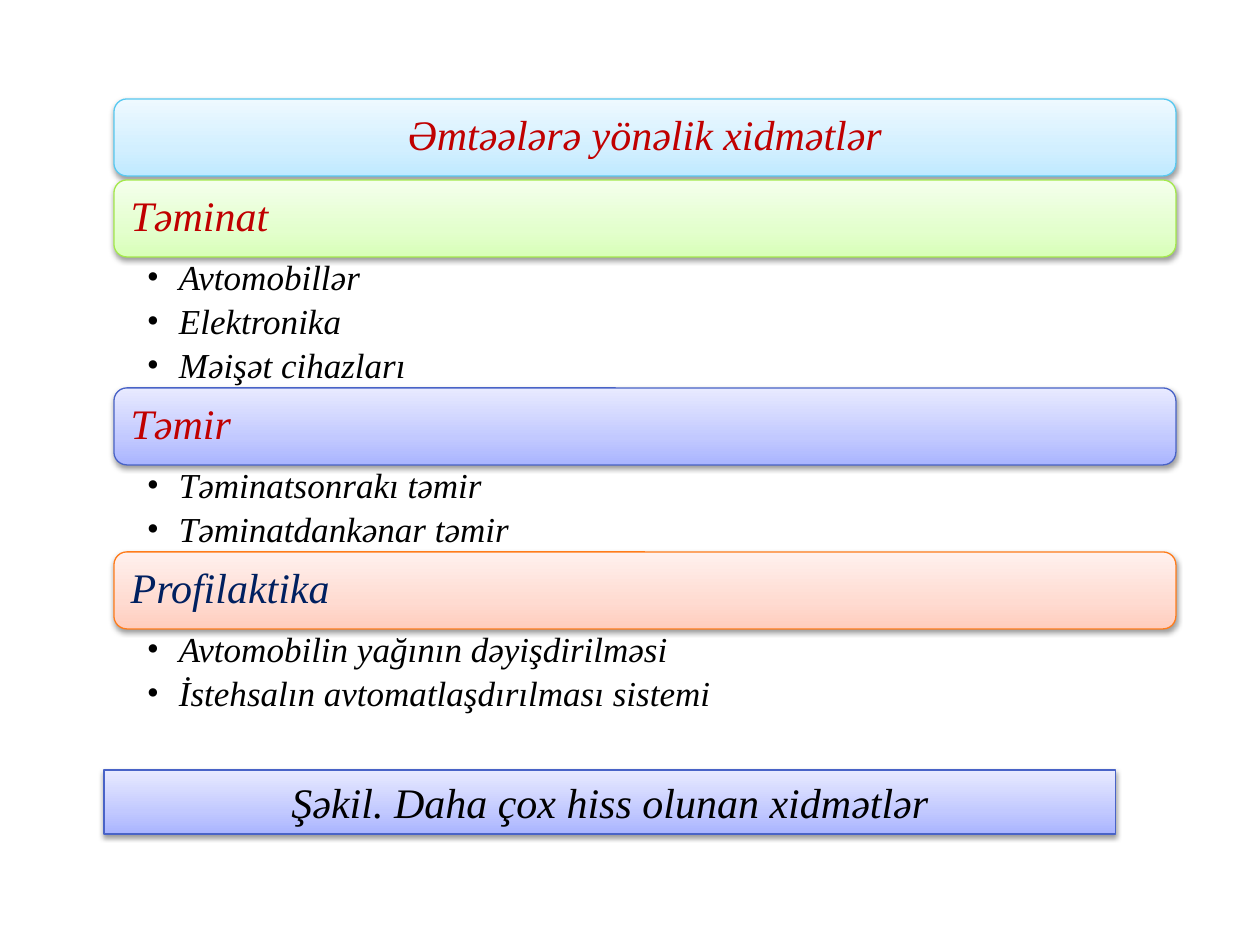
from copy import deepcopy
from dataclasses import dataclass

from lxml.etree import SubElement
from pptx import Presentation
from pptx.dml.color import RGBColor
from pptx.enum.shapes import MSO_SHAPE
from pptx.enum.text import MSO_ANCHOR, MSO_AUTO_SIZE, PP_ALIGN
from pptx.oxml.ns import qn
from pptx.util import Pt


@dataclass(frozen=True)
class Theme:
    font: str = "Times New Roman"
    heading_size: int = 24
    item_size: int = 20
    red: str = "C00000"
    navy: str = "002060"
    black: str = "000000"
    sky: tuple = ("BFE9FF", "D2EFFF", "EEF9FF", "58C9F1")
    green: tuple = ("D8FFB8", "E3FFCD", "F4FFEC", "A4E94C")
    indigo: tuple = ("A9B4FF", "C2C9FF", "E8EAFF", "4963C7")
    coral: tuple = ("FFCDBD", "FFDBD1", "FFF1EE", "FF7C1B")


theme = Theme()
PX = 914400 // 126
LEFT, WIDTH, BAR_HEIGHT, ITEM_HEIGHT = 114, 1062, 77, 44


def add_bar(slide, kind, box, palette):
    shape = slide.shapes.add_shape(kind, *[value * PX for value in box])
    shape.fill.gradient()
    shape.fill.gradient_angle = 90
    stop_list = shape._element.spPr.find(".//" + qn("a:gsLst"))
    stop_list.insert(1, deepcopy(stop_list[0]))
    for stop, position, color in zip(shape.fill.gradient_stops, (0, 0.35, 1), palette):
        stop.position = position
        stop.color.rgb = RGBColor.from_string(color)
    shape.line.color.rgb = RGBColor.from_string(palette[3])
    shape.line.width = Pt(0.75)
    shape.shadow.inherit = False
    effects = shape._element.spPr.find(qn("a:effectLst"))
    shadow = SubElement(effects, qn("a:outerShdw"), blurRad="40000", dist="20000",
                        dir="5400000", rotWithShape="0")
    shadow_color = SubElement(shadow, qn("a:srgbClr"), val=theme.black)
    SubElement(shadow_color, qn("a:alpha"), val="38000")
    return shape


def write(shape, lines, size, color, align, anchor, margins, spacing=0.9):
    frame = shape.text_frame
    frame.word_wrap = True
    frame.auto_size = MSO_AUTO_SIZE.NONE
    frame.vertical_anchor = anchor
    frame.margin_left, frame.margin_top, frame.margin_right, frame.margin_bottom = [
        margin * PX for margin in margins]
    frame.text = "\n".join(lines)
    for paragraph in frame.paragraphs:
        paragraph.alignment = align
        paragraph.line_spacing = spacing
        paragraph.font.name = theme.font
        paragraph.font.size = Pt(size)
        paragraph.font.italic = True
        paragraph.font.color.rgb = RGBColor.from_string(color)
    return frame.paragraphs


presentation = Presentation()
presentation.slide_width = 1260 * PX
presentation.slide_height = 945 * PX
slide = presentation.slides.add_slide(presentation.slide_layouts[5])

title_bar = add_bar(slide, MSO_SHAPE.ROUNDED_RECTANGLE, (LEFT, 99, WIDTH, BAR_HEIGHT), theme.sky)
title = slide.shapes.title
title.left, title.top = title_bar.left, title_bar.top
title.width, title.height = title_bar.width, title_bar.height
title_bar._element.addnext(title._element)
write(title, ["Əmtəələrə yönəlik xidmətlər"], theme.heading_size, theme.red,
      PP_ALIGN.CENTER, MSO_ANCHOR.MIDDLE, (16, 12, 16, 14))

sections = [
    ("Təminat", theme.green, theme.red, ["Avtomobillər", "Elektronika", "Məişət cihazları"]),
    ("Təmir", theme.indigo, theme.red, ["Təminatsonrakı təmir", "Təminatdankənar təmir"]),
    ("Profilaktika", theme.coral, theme.navy,
     ["Avtomobilin yağının dəyişdirilməsi", "İstehsalın avtomatlaşdırılması sistemi"]),
]
top = 180
for heading, palette, color, items in sections:
    bar = add_bar(slide, MSO_SHAPE.ROUNDED_RECTANGLE, (LEFT, top, WIDTH, BAR_HEIGHT), palette)
    write(bar, [heading], theme.heading_size, color,
          PP_ALIGN.LEFT, MSO_ANCHOR.MIDDLE, (13, 12, 13, 13))
    top += BAR_HEIGHT
    list_height = ITEM_HEIGHT * len(items) - 1
    item_box = slide.shapes.add_textbox(LEFT * PX, top * PX, WIDTH * PX, list_height * PX)
    for paragraph in write(item_box, items, theme.item_size, theme.black,
                           PP_ALIGN.LEFT, MSO_ANCHOR.TOP, (33, 3, 20, 3)):
        paragraph.space_after = Pt(3.6)
        properties = paragraph._p.get_or_add_pPr()
        properties.set("marL", str(32 * PX))
        properties.set("indent", str(-32 * PX))
        SubElement(properties, qn("a:buFont"), typeface=theme.font)
        SubElement(properties, qn("a:buChar"), char="•")
        properties.append(properties.find(qn("a:defRPr")))
    top += list_height

caption = add_bar(slide, MSO_SHAPE.RECTANGLE, (104, 770, 1012, 64), theme.indigo)
write(caption, ["Şəkil. Daha çox hiss olunan xidmətlər"], theme.heading_size, theme.black,
      PP_ALIGN.CENTER, MSO_ANCHOR.MIDDLE, (13, 6, 13, 6), 1.0)

presentation.save("out.pptx")
